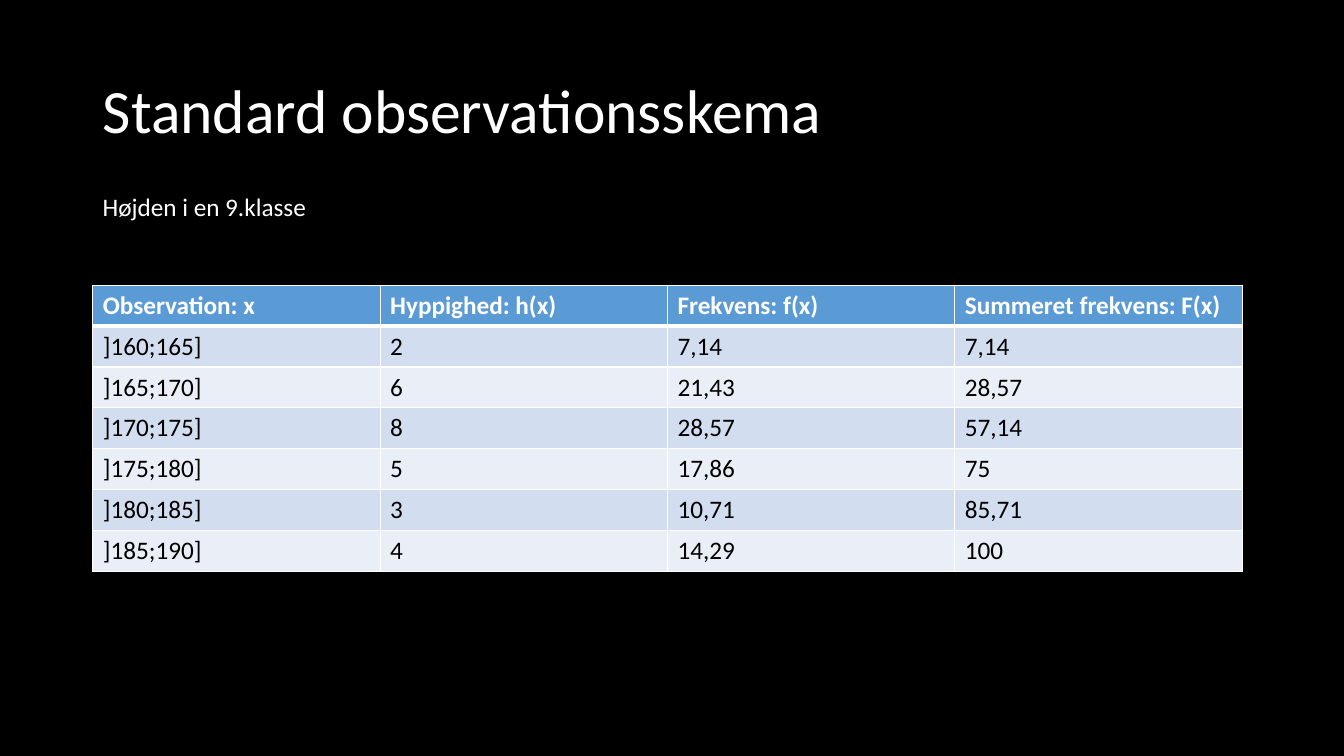
from lxml import etree
from pptx import Presentation
from pptx import util as u
from pptx.dml.color import RGBColor
from pptx.enum import text
from pptx.oxml import ns

TITLE = "Standard observationsskema"
SUBTITLE = "Højden i en 9.klasse"
HEADER = ("Observation: x", "Hyppighed: h(x)", "Frekvens: f(x)", "Summeret frekvens: F(x)")
ROWS = [
    ("]160;165]", "2", "7,14", "7,14"),
    ("]165;170]", "6", "21,43", "28,57"),
    ("]170;175]", "8", "28,57", "57,14"),
    ("]175;180]", "5", "17,86", "75"),
    ("]180;185]", "3", "10,71", "85,71"),
    ("]185;190]", "4", "14,29", "100"),
]
BLACK, WHITE, BLUE = "000000", "FFFFFF", "5B9BD5"
BANDS = ("D2DEEF", "EAEFF7")

WIDTH, HEIGHT = u.Inches(13.33), u.Inches(7.5)
LEFT, TEXT_WIDTH = u.Inches(0.92), u.Inches(11.5)
TITLE_TOP, TITLE_HEIGHT = u.Inches(0.4), u.Inches(1.45)
SUBTITLE_HEIGHT = u.Inches(0.4)
TABLE_TOP = u.Inches(2.83)
COL_WIDTH, ROW_HEIGHT = u.Inches(2.85), u.Pt(29.2)


def color(hex_value):
    return RGBColor.from_string(hex_value)


def write(tf, words, hex_value=WHITE, size=18, bold=False):
    p = tf.paragraphs[0]
    r = p.add_run()
    r.text = words
    for name, value in {"name": "Calibri", "size": u.Pt(size), "bold": bold}.items():
        setattr(r.font, name, value)
    r.font.color.rgb = color(hex_value)
    return p


def add_borders(cell, bottom):
    """Draw white borders, 1 pt on all sides but the bottom."""
    props = cell._tc.get_or_add_tcPr()
    for side, points in {"L": 1, "R": 1, "T": 1, "B": bottom}.items():
        ln = etree.SubElement(props, ns.qn("a:ln" + side), w=str(u.Pt(points)))
        fill = etree.SubElement(ln, ns.qn("a:solidFill"))
        etree.SubElement(fill, ns.qn("a:srgbClr"), val=WHITE)


def add_title(slide):
    sp = slide.shapes.title
    sp.left, sp.top, sp.width, sp.height = LEFT, TITLE_TOP, TEXT_WIDTH, TITLE_HEIGHT
    tf = sp.text_frame
    tf.word_wrap = True
    tf.vertical_anchor = text.MSO_ANCHOR.MIDDLE
    p = write(tf, TITLE, size=44)
    p.alignment, p.line_spacing = text.PP_ALIGN.LEFT, 0.9


def add_subtitle(slide):
    box = slide.shapes.add_textbox(LEFT, TITLE_TOP + TITLE_HEIGHT, TEXT_WIDTH, SUBTITLE_HEIGHT)
    tf = box.text_frame
    tf.word_wrap = True
    tf.auto_size = text.MSO_AUTO_SIZE.SHAPE_TO_FIT_TEXT
    write(tf, SUBTITLE)


def add_observations(slide):
    grid = [HEADER, *ROWS]
    n_rows, n_cols = len(grid), len(HEADER)
    table = slide.shapes.add_table(n_rows, n_cols, LEFT, TABLE_TOP,
                                   COL_WIDTH * n_cols, ROW_HEIGHT * n_rows).table
    for i, values in enumerate(grid):
        head = i == 0
        table.rows[i].height = ROW_HEIGHT
        for j, value in enumerate(values):
            cell = table.cell(i, j)
            write(cell.text_frame, value, WHITE if head else BLACK, bold=head)
            add_borders(cell, bottom=3 if head else 1)
            cell.fill.solid()
            cell.fill.fore_color.rgb = color(BLUE if head else BANDS[(i - 1) % 2])


def main():
    prs = Presentation()
    prs.slide_width, prs.slide_height = WIDTH, HEIGHT
    slide = prs.slides.add_slide(prs.slide_layouts.get_by_name("Title Only"))
    background = slide.background.fill
    background.solid()
    background.fore_color.rgb = color(BLACK)
    add_title(slide)
    add_observations(slide)
    add_subtitle(slide)
    prs.save("out.pptx")


if __name__ == "__main__":
    main()
